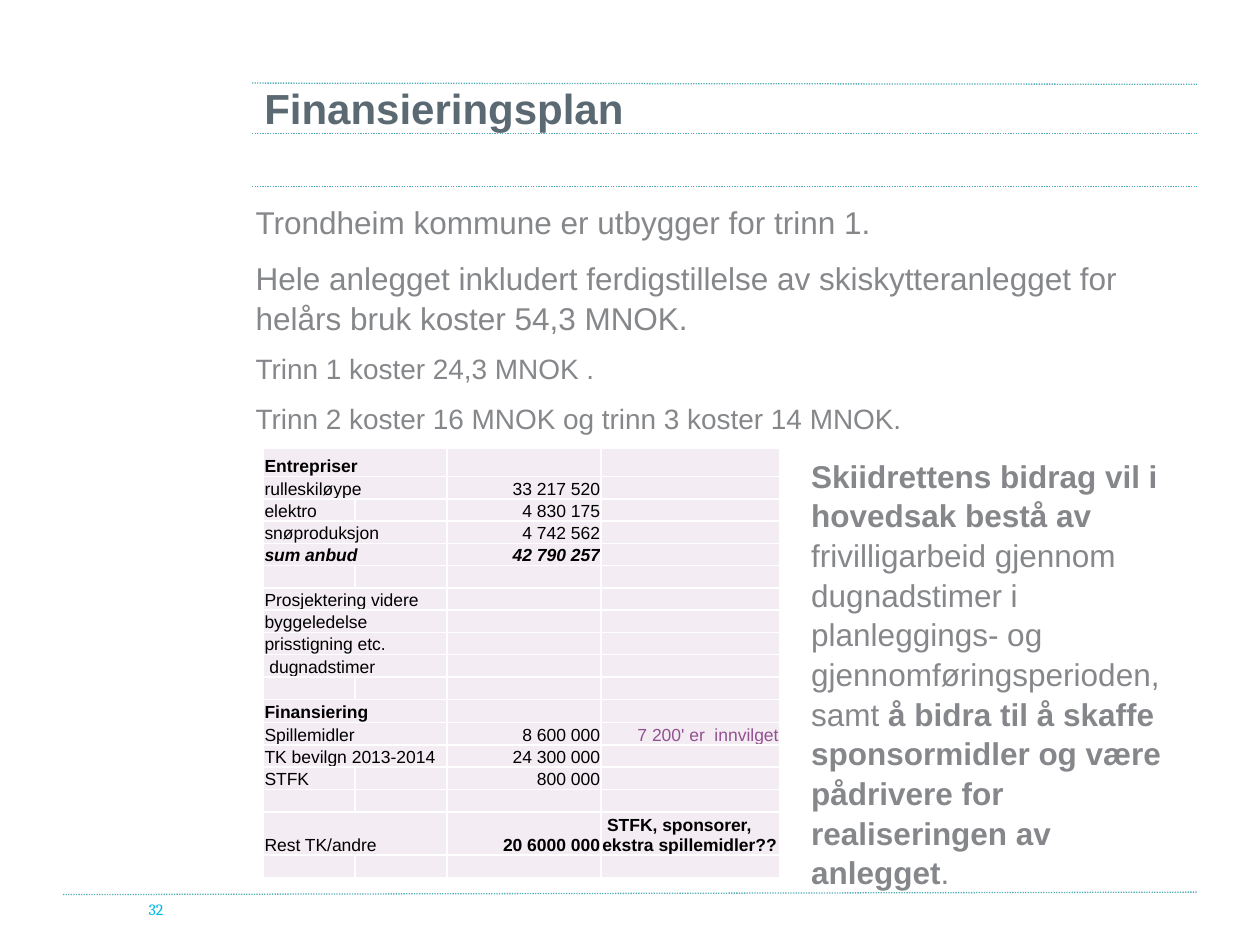
"""Build the Finansieringsplan slide with its cost table."""
from dataclasses import dataclass
from typing import NamedTuple

from lxml.etree import SubElement
from pptx import Presentation
from pptx.dml.color import RGBColor
from pptx.enum.dml import MSO_LINE
from pptx.enum.shapes import MSO_CONNECTOR
from pptx.enum.text import MSO_ANCHOR as Anchor, PP_ALIGN as Align
from pptx.oxml.ns import qn
from pptx.util import Pt


@dataclass(frozen=True)
class Theme:
    font: str = "Arial"
    number_font: str = "Cambria"
    title: str = "5B6973"
    body: str = "85878A"
    number: str = "00B6E3"
    rule: str = "55AEB7"
    ink: str = "000000"
    accent: str = "945191"
    cell: str = "F3ECF2"
    border: str = "FFFFFF"
    title_size: float = 24
    body_size: float = 18
    small_size: float = 16
    table_size: float = 10
    number_size: float = 9


class Rule(NamedTuple):
    left: float
    start_y: float
    right: float
    end_y: float


class Span(NamedTuple):
    text: str
    bold: bool = False


class Entry(NamedTuple):
    label: str = ""
    amount: str = ""
    note: str = ""
    bold: str = ""
    italic: bool = False
    merged: bool = True
    height: float = 12.7


THEME = Theme()
RULES = [
    Rule(144, 47.5, 684, 48.2),
    Rule(144, 76.3, 684, 76.3),
    Rule(144, 106.5, 684, 106.5),
    Rule(36, 511.2, 684, 509.8),
]
INTRO = [
    ("Trondheim kommune er utbygger for trinn 1.", THEME.body_size),
    ("Hele anlegget inkludert ferdigstillelse av skiskytteranlegget for "
     "helårs bruk koster 54,3 MNOK.", THEME.body_size),
    ("Trinn 1 koster 24,3 MNOK .", THEME.small_size),
    ("Trinn 2 koster 16 MNOK og trinn 3 koster 14 MNOK.", THEME.small_size),
]
CONTRIBUTION = [
    Span("Skiidrettens bidrag vil i hovedsak bestå av ", True),
    Span("frivilligarbeid gjennom dugnadstimer i planleggings- og "
         "gjennomføringsperioden, samt "),
    Span("å bidra til å skaffe sponsormidler og være pådrivere for "
         "realiseringen av anlegget", True),
    Span("."),
]
COLUMNS = [52.5, 52.5, 88, 102]
BLANK = Entry(merged=False)
ENTRIES = [
    Entry("Entrepriser", bold="label", height=16),
    Entry("rulleskiløype", "33 217 520"),
    Entry("elektro", "4 830 175", merged=False),
    Entry("snøproduksjon", "4 742 562"),
    Entry("sum anbud", "42 790 257", bold="label amount", italic=True),
    BLANK,
    Entry("Prosjektering videre"),
    Entry("byggeledelse"),
    Entry("prisstigning etc."),
    Entry(" dugnadstimer"),
    BLANK,
    Entry("Finansiering", bold="label", height=13.4),
    Entry("Spillemidler", "8 600 000", "7 200' er  innvilget"),
    Entry("TK bevilgn 2013-2014", "24 300 000"),
    Entry("STFK", "800 000", merged=False),
    BLANK,
    Entry("Rest TK/andre", "20 6000 000", " STFK, sponsorer, ekstra spillemidler??",
          bold="amount note", height=23.4),
    Entry(merged=False, height=13.1),
]


def write(para, text: str, *, size: float, color: str, font: str = THEME.font,
          bold: bool = False, italic: bool = False) -> None:
    """Add one formatted span of text to a paragraph."""
    span = para.add_run()
    span.text = text
    span.font.size = Pt(size)
    span.font.name = font
    span.font.bold = bold
    span.font.italic = italic
    span.font.color.rgb = RGBColor.from_string(color)


def add_frame(page, left: float, top: float, width: float, height: float,
              anchor: Anchor = Anchor.TOP):
    """Add a wrapping text box and return its text frame."""
    frame = page.shapes.add_textbox(Pt(left), Pt(top), Pt(width), Pt(height)).text_frame
    frame.word_wrap = True
    frame.vertical_anchor = anchor
    return frame


def add_rule(page, rule: Rule) -> None:
    """Draw one dotted rule across the page."""
    line = page.shapes.add_connector(MSO_CONNECTOR.STRAIGHT, *map(Pt, rule))
    line.line.color.rgb = RGBColor.from_string(THEME.rule)
    line.line.width = Pt(0.75)
    line.line.dash_style = MSO_LINE.ROUND_DOT
    SubElement(line.element.spPr, qn("a:effectLst"))


def style_cell(cell) -> None:
    """Give a cell its margins, white borders and fill."""
    cell.margin_left = cell.margin_right = cell.margin_top = Pt(0.7)
    cell.margin_bottom = Pt(0)
    cell.vertical_anchor = Anchor.BOTTOM
    properties = cell._tc.get_or_add_tcPr()
    for side in ("lnL", "lnR", "lnT", "lnB"):
        border = SubElement(properties, qn(f"a:{side}"), w=str(Pt(1)))
        fill = SubElement(border, qn("a:solidFill"))
        SubElement(fill, qn("a:srgbClr"), val=THEME.border)
    cell.fill.solid()
    cell.fill.fore_color.rgb = RGBColor.from_string(THEME.cell)


def fill_cell(cell, text: str, *, align: Align, color: str, bold: bool, italic: bool) -> None:
    """Write a cell, or keep an empty one at table text size."""
    para = cell.text_frame.paragraphs[0]
    para.alignment = align
    if text:
        write(para, text, size=THEME.table_size, color=color, bold=bold, italic=italic)
    else:
        SubElement(para._p, qn("a:endParaRPr"), sz=str(int(THEME.table_size * 100)))


def add_costs(page) -> None:
    """Add the cost and financing table."""
    height = sum(entry.height for entry in ENTRIES)
    table = page.shapes.add_table(len(ENTRIES), len(COLUMNS), Pt(150.5), Pt(256.3),
                                  Pt(sum(COLUMNS)), Pt(height)).table
    table.first_row = table.horz_banding = False
    for column, width in zip(table.columns, COLUMNS):
        column.width = Pt(width)
    for index, entry in enumerate(ENTRIES):
        table.rows[index].height = Pt(entry.height)
        note_bold = "note" in entry.bold
        values = [
            (entry.label, Align.LEFT, THEME.ink, "label" in entry.bold),
            ("", Align.LEFT, THEME.ink, False),
            (entry.amount, Align.RIGHT, THEME.ink, "amount" in entry.bold),
            (entry.note, Align.LEFT if note_bold else Align.RIGHT,
             THEME.ink if note_bold else THEME.accent, note_bold),
        ]
        for position, (text, align, color, bold) in enumerate(values):
            cell = table.cell(index, position)
            style_cell(cell)
            fill_cell(cell, text, align=align, color=color, bold=bold, italic=entry.italic)
        if entry.merged:
            table.cell(index, 0).merge(table.cell(index, 1))


def main() -> None:
    """Build and save the deck."""
    deck = Presentation()
    deck.slide_width, deck.slide_height = Pt(720), Pt(540)
    page = deck.slides.add_slide(deck.slide_layouts[6])
    for rule in RULES:
        add_rule(page, rule)

    title = add_frame(page, 144, 43.5, 540, 68)
    write(title.paragraphs[0], "Finansieringsplan", size=THEME.title_size,
          color=THEME.title, bold=True)

    intro = add_frame(page, 139, 111.6, 556, 144.7)
    for index, (text, size) in enumerate(INTRO):
        para = intro.add_paragraph() if index else intro.paragraphs[0]
        para.line_spacing = 1.05
        para.space_before = Pt(size / 2 if index else 0)
        write(para, text, size=size, color=THEME.body)

    number = add_frame(page, 77.8, 505.4, 66.2, 28.8, Anchor.MIDDLE)
    write(number.paragraphs[0], "32", size=THEME.number_size, color=THEME.number,
          font=THEME.number_font)

    add_costs(page)

    para = add_frame(page, 456.5, 256.3, 221, 249).paragraphs[0]
    para.line_spacing = 1.05
    for text, bold in CONTRIBUTION:
        write(para, text, size=THEME.body_size, color=THEME.body, bold=bold)
    deck.save("out.pptx")


if __name__ == "__main__":
    main()
